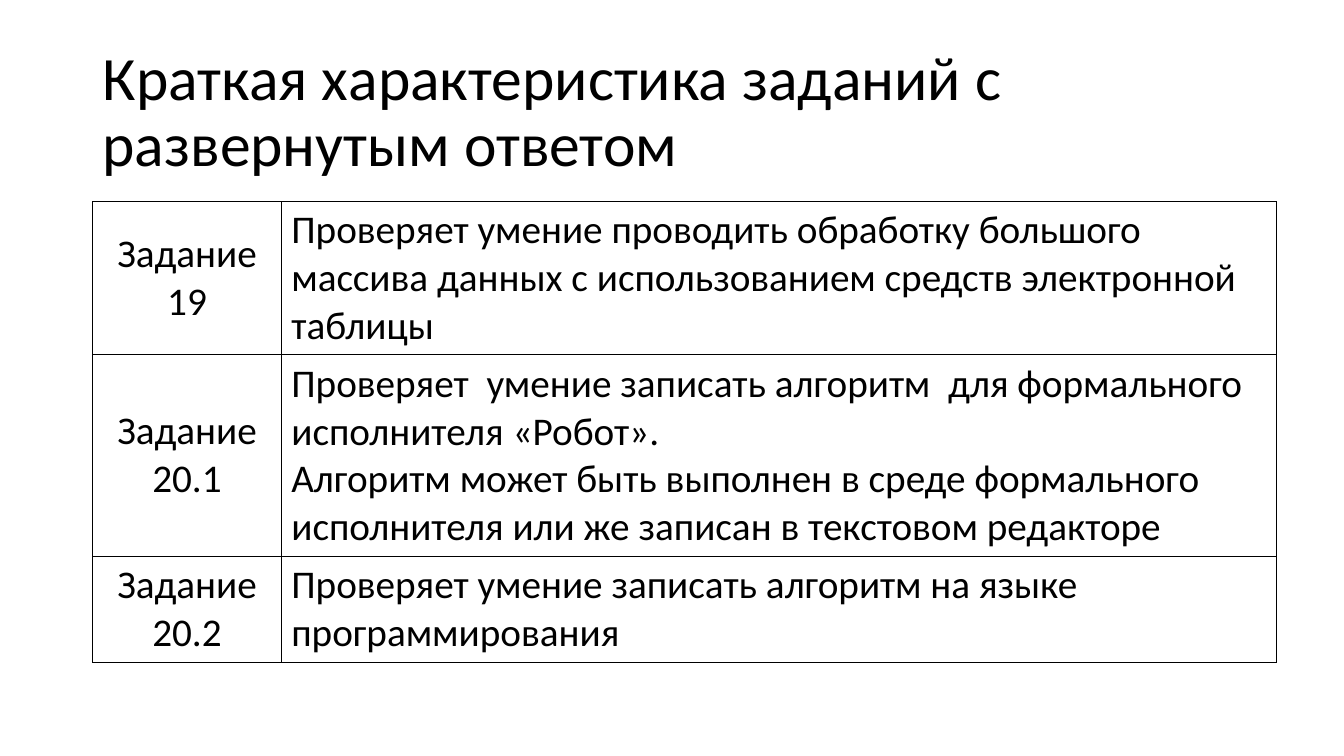
from lxml import etree
from pptx import Presentation
from pptx import util as u
from pptx.dml.color import RGBColor
from pptx.enum import text
from pptx.oxml.ns import qn

TASKS = [
    ("Задание 19", 1.52,
     ["Проверяет умение проводить обработку большого массива данных "
      "с использованием средств электронной таблицы"]),
    ("Задание 20.1", 2.0,
     ["Проверяет  умение записать алгоритм  для формального исполнителя «Робот».",
      "Алгоритм может быть выполнен в среде формального исполнителя "
      "или же записан в текстовом редакторе"]),
    ("Задание 20.2", 1.05,
     ["Проверяет умение записать алгоритм на языке программирования"]),
]


class SlideBuilder:
    font = "Calibri"
    colors = {"text": "000000", "border": "000000"}

    def __init__(self, slide):
        self.slide = slide

    def set_text(self, frame, lines, size, align=text.PP_ALIGN.LEFT, spacing=None):
        frame.word_wrap = True
        frame.text = "\n".join(lines)
        for paragraph in frame.paragraphs:
            paragraph.alignment = align
            paragraph.line_spacing = spacing
            for run in paragraph.runs:
                run.font.name = self.font
                run.font.size = u.Pt(size)
                run.font.color.rgb = RGBColor.from_string(self.colors["text"])

    def title(self, wording, left, top, width, height):
        heading = self.slide.shapes.add_textbox(
            u.Inches(left), u.Inches(top), u.Inches(width), u.Inches(height))
        heading.text_frame.vertical_anchor = text.MSO_ANCHOR.MIDDLE
        self.set_text(heading.text_frame, [wording], 44, spacing=0.9)

    def border(self, cell):
        properties = cell._tc.get_or_add_tcPr()
        for position, side in enumerate(("a:lnL", "a:lnR", "a:lnT", "a:lnB")):
            edge = etree.Element(qn(side), w=str(u.Pt(1)))
            fill = etree.SubElement(edge, qn("a:solidFill"))
            etree.SubElement(fill, qn("a:srgbClr"), val=self.colors["border"])
            properties.insert(position, edge)

    def task_table(self, tasks, left, top, widths):
        height = sum(row_height for _, row_height, _ in tasks)
        table = self.slide.shapes.add_table(
            len(tasks), len(widths), u.Inches(left), u.Inches(top),
            u.Inches(sum(widths)), u.Inches(height)).table
        table.first_row = table.horz_banding = False
        for column, width in zip(table.columns, widths):
            column.width = u.Inches(width)
        for row, (task, row_height, skills) in zip(table.rows, tasks):
            row.height = u.Inches(row_height)
            task_cell, skill_cell = row.cells
            task_cell.vertical_anchor = text.MSO_ANCHOR.MIDDLE
            self.set_text(task_cell.text_frame, [task], 28, text.PP_ALIGN.CENTER)
            self.set_text(skill_cell.text_frame, skills, 28)
            for cell in row.cells:
                cell.fill.background()
                self.border(cell)


def main():
    deck = Presentation()
    deck.slide_width = u.Inches(13.33)
    deck.slide_height = u.Inches(7.5)
    builder = SlideBuilder(deck.slides.add_slide(deck.slide_layouts[6]))
    builder.title("Краткая характеристика заданий с развернутым ответом",
                  0.92, 0.4, 11.5, 1.45)
    builder.task_table(TASKS, 0.92, 2, (1.87, 9.87))
    deck.save("out.pptx")


if __name__ == "__main__":
    main()
